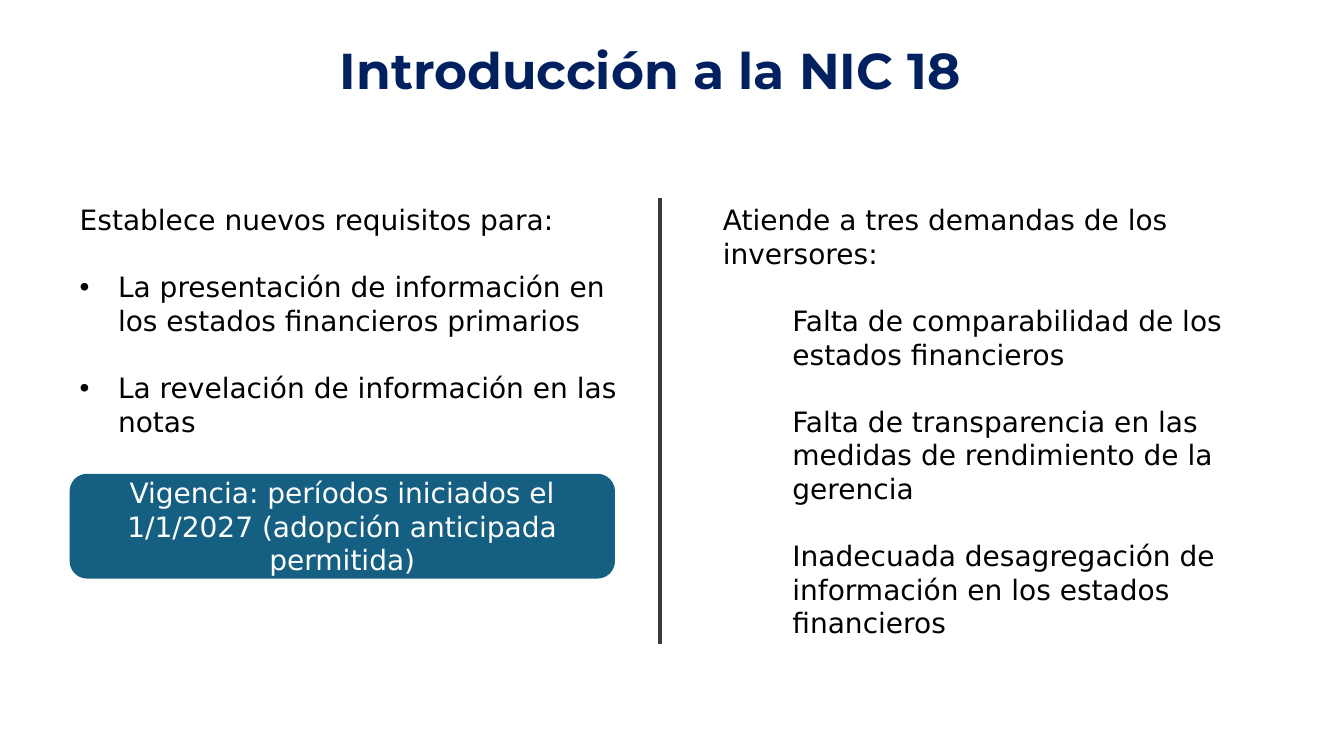
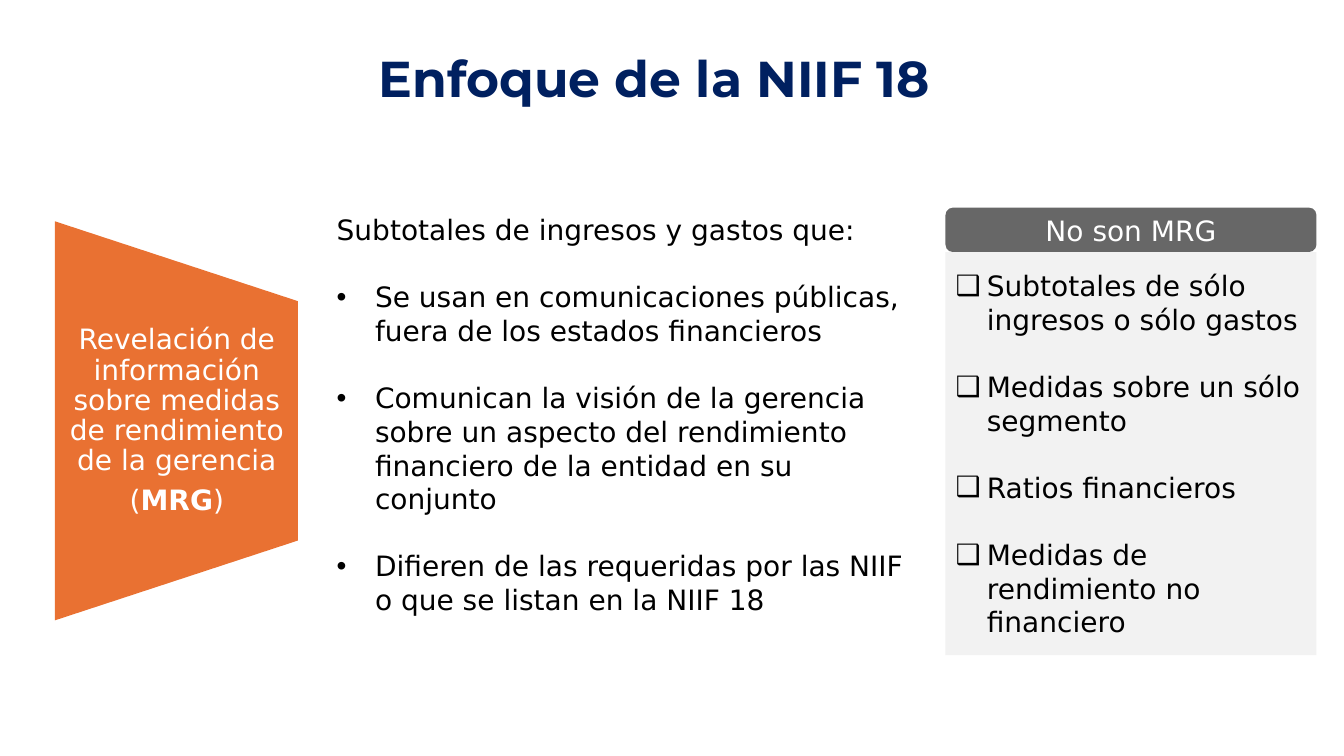
from lxml.etree import SubElement
from pptx import Presentation
from pptx.dml.color import RGBColor
from pptx.enum.shapes import MSO_CONNECTOR, MSO_SHAPE
from pptx.enum.text import MSO_ANCHOR, MSO_AUTO_SIZE, PP_ALIGN
from pptx.oxml.ns import qn
from pptx.util import Inches, Pt

NAVY = RGBColor(0x00, 0x20, 0x60)
TEAL = RGBColor(0x15, 0x60, 0x82)
ORANGE = RGBColor(0xE9, 0x71, 0x32)
BLACK = RGBColor(0x00, 0x00, 0x00)
WHITE = RGBColor(0xFF, 0xFF, 0xFF)
CHARCOAL = RGBColor(0x3A, 0x3A, 0x3A)
GREY = RGBColor(0x67, 0x67, 0x67)
PALE = RGBColor(0xF2, 0xF2, 0xF2)


class Deck:
    title_font, body_font = "Montserrat", "DejaVu Sans"
    title_size, body_size, gap = Pt(36), Pt(20), Pt(24)
    two_content = 3

    def __init__(self):
        self.prs = Presentation()
        self.prs.slide_width, self.prs.slide_height = Inches(13.33), Inches(7.5)

    def box(self, x, y, w, h):
        sw, sh = self.prs.slide_width, self.prs.slide_height
        return [int(v * side / 100) for v, side in ((x, sw), (y, sh), (w, sw), (h, sh))]

    def move(self, sp, *area):
        sp.left, sp.top, sp.width, sp.height = self.box(*area)

    def style(self, p, color, font=body_font, size=body_size, bold=False):
        for r in p.runs:
            r.font.name, r.font.size, r.font.bold = font, size, bold
            r.font.color.rgb = color

    def slide(self, title, x, y):
        self.s = self.prs.slides.add_slide(self.prs.slide_layouts[self.two_content])
        sp = self.s.shapes.title
        self.move(sp, x, y, 92.1, 19.33)
        tf = sp.text_frame
        tf.text = title
        tf.auto_size = MSO_AUTO_SIZE.NONE
        tf.vertical_anchor = MSO_ANCHOR.MIDDLE
        p = tf.paragraphs[0]
        p.alignment, p.line_spacing = PP_ALIGN.CENTER, 0.9
        self.style(p, NAVY, self.title_font, self.title_size, True)

    def items(self, slot, area, items, intro=None, bullet=None, indent=0.38,
              fill=None, anchor=MSO_ANCHOR.TOP):
        sp = self.s.placeholders[slot]
        self.move(sp, *area)
        if fill is not None:
            sp.fill.solid()
            sp.fill.fore_color.rgb = fill
        tf = sp.text_frame
        tf.auto_size, tf.vertical_anchor = MSO_AUTO_SIZE.NONE, anchor
        tf.text = "\n".join(([intro] if intro else []) + items)
        for i, p in enumerate(tf.paragraphs):
            listed = i > 0 or not intro
            left = Inches(indent) if listed else 0
            pPr = p._p.get_or_add_pPr()
            pPr.set("marL", str(left))
            pPr.set("indent", str(-left if bullet else 0))
            if listed and bullet:
                SubElement(pPr, qn("a:buChar")).set("char", bullet)
            else:
                SubElement(pPr, qn("a:buNone"))
            p.space_before = self.gap if i else Pt(0)
            self.style(p, BLACK)

    def shape(self, kind, area, fill, text="", rotation=0):
        sp = self.s.shapes.add_shape(kind, *self.box(*area))
        sp.shadow.inherit = False
        sp.fill.solid()
        sp.fill.fore_color.rgb = fill
        sp.line.fill.background()
        sp.rotation = rotation
        if text:
            tf = sp.text_frame
            tf.text = text
            tf.vertical_anchor = MSO_ANCHOR.MIDDLE
            tf.paragraphs[0].alignment = PP_ALIGN.CENTER
            self.style(tf.paragraphs[0], WHITE)

    def caption(self, area, text, acronym):
        tf = self.s.shapes.add_textbox(*self.box(*area)).text_frame
        tf.word_wrap, tf.vertical_anchor = True, MSO_ANCHOR.MIDDLE
        tf.margin_left = tf.margin_right = Inches(0.14)
        tf.margin_top = tf.margin_bottom = 0
        tf.text = text
        last = tf.add_paragraph()
        for part in ("(", acronym, ")"):
            last.add_run().text = part
        for p in tf.paragraphs:
            p.alignment, p.line_spacing, p.space_after = PP_ALIGN.CENTER, 0.9, Pt(7)
            self.style(p, WHITE)
        last.runs[1].font.bold = True

    def divider(self, x, y, h):
        left, top, _, height = self.box(x, y, 0, h)
        line = self.s.shapes.add_connector(MSO_CONNECTOR.STRAIGHT, left, top, left, top + height)
        line.line.color.rgb, line.line.width = CHARCOAL, Pt(3)
        SubElement(line._element.spPr, qn("a:effectLst"))


def introduction(deck):
    top, width = 26.13, 43.95
    deck.slide("Introducción a la NIC 18", 2.33, 0)
    deck.items(1, (5.18, top, width, 32.8), [
        "La presentación de información en los estados financieros primarios",
        "La revelación de información en las notas",
    ], "Establece nuevos requisitos para:", "•")
    deck.shape(MSO_SHAPE.ROUNDED_RECTANGLE, (5.18, 62.67, 40.58, 13.87), TEAL,
               "Vigencia: períodos iniciados el 1/1/2027 (adopción anticipada permitida)")
    deck.items(2, (53.03, top, width, 60), [
        "Falta de comparabilidad de los estados financieros",
        "Falta de transparencia en las medidas de rendimiento de la gerencia",
        "Inadecuada desagregación de información en los estados financieros",
    ], "Atiende a tres demandas de los inversores:", indent=0.69)
    deck.divider(49.13, top, 59.07)


def approach(deck):
    top, head = 27.47, 5.87
    left, width = 70.35, 27.6
    deck.slide("Enfoque de la NIIF 18", 2.63, 1.07)
    deck.shape(MSO_SHAPE.FLOWCHART_MANUAL_OPERATION, (-1.73, 39.6, 29.7, 32.13), ORANGE,
               rotation=270)
    deck.caption((4.13, 39.87, 18.07, 31.73),
                 "Revelación de información sobre medidas de rendimiento de la gerencia", "MRG")
    deck.items(1, (24.3, top, 43.95, 55.2), [
        "Se usan en comunicaciones públicas, fuera de los estados financieros",
        "Comunican la visión de la gerencia sobre un aspecto del rendimiento "
        "financiero de la entidad en su conjunto",
        "Difieren de las requeridas por las NIIF o que se listan en la NIIF 18",
    ], "Subtotales de ingresos y gastos que:", "•")
    deck.items(2, (left, top + head, width, 53.33), [
        "Subtotales de sólo ingresos o sólo gastos",
        "Medidas sobre un sólo segmento",
        "Ratios financieros",
        "Medidas de rendimiento no financiero",
    ], bullet="❑", indent=0.31, fill=PALE, anchor=MSO_ANCHOR.MIDDLE)
    deck.shape(MSO_SHAPE.ROUNDED_RECTANGLE, (left, top, width, head), GREY, "No son MRG")


def main():
    deck = Deck()
    introduction(deck)
    approach(deck)
    deck.prs.save("out.pptx")


if __name__ == "__main__":
    main()
